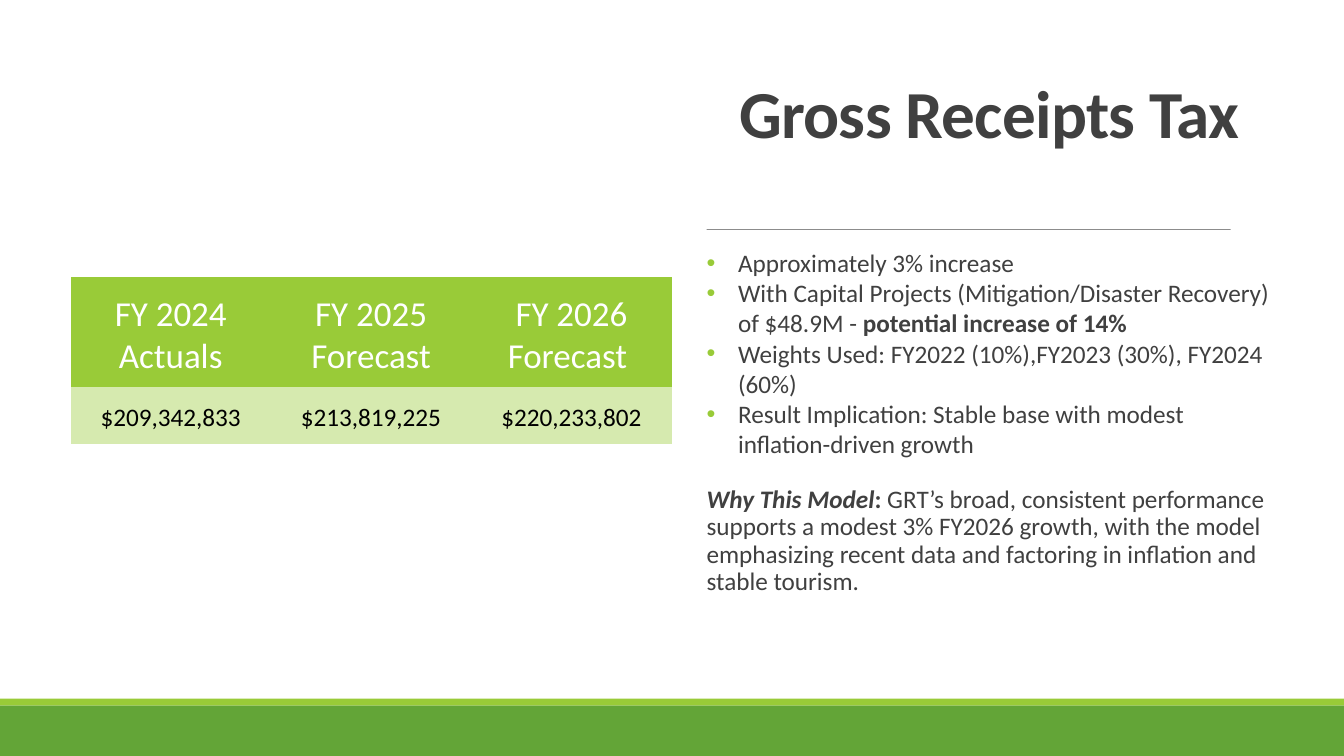
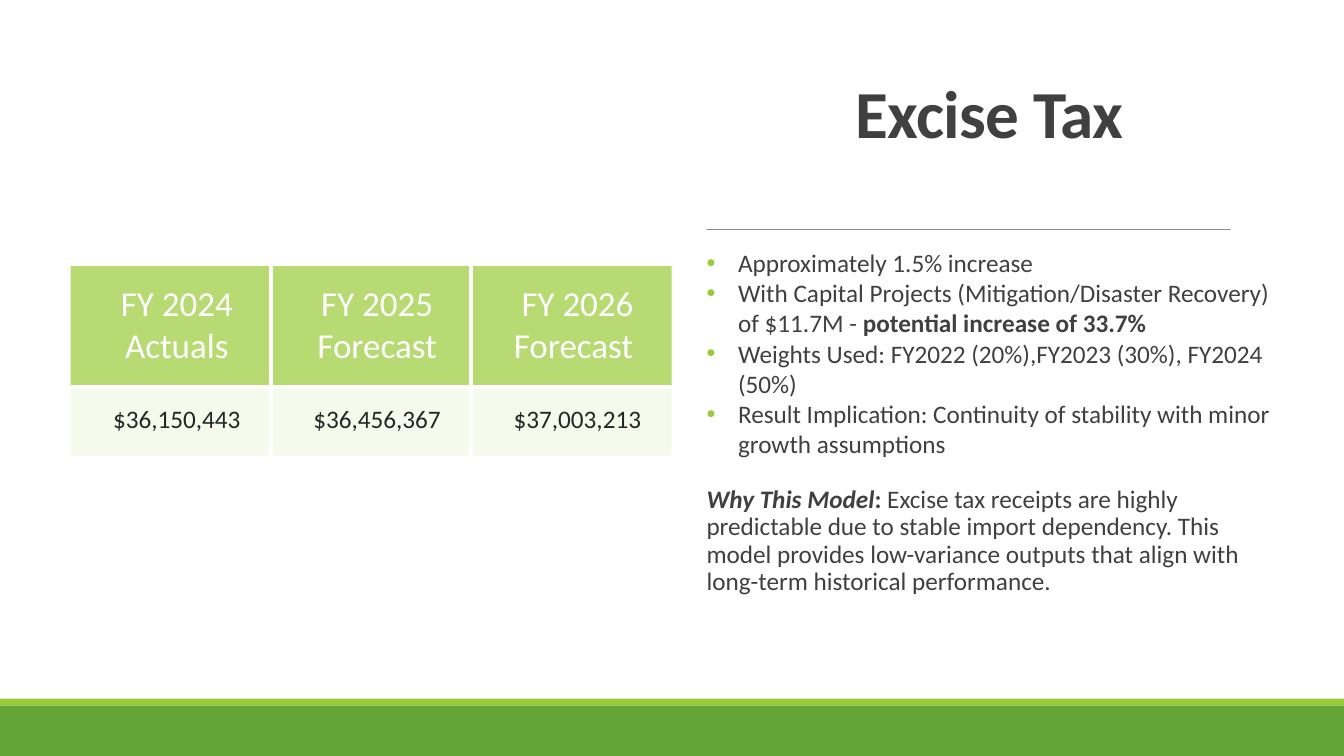
from dataclasses import dataclass

from lxml import etree
from pptx import Presentation
from pptx.dml.color import RGBColor
from pptx.enum.shapes import MSO_CONNECTOR, MSO_SHAPE
from pptx.enum.text import MSO_ANCHOR, PP_ALIGN
from pptx.oxml.ns import qn
from pptx.util import Pt

RECT = MSO_SHAPE.RECTANGLE
STRAIGHT = MSO_CONNECTOR.STRAIGHT
TOP = MSO_ANCHOR.TOP
MIDDLE = MSO_ANCHOR.MIDDLE
BOTTOM = MSO_ANCHOR.BOTTOM
LEFT = PP_ALIGN.LEFT
CENTER = PP_ALIGN.CENTER
PLAIN_GRID = "{2D5ABB26-0587-4C30-8999-92F81FD0307C}"


@dataclass(frozen=True)
class Theme:
    font: str = "Calibri"
    white: str = "FFFFFF"
    black: str = "000000"
    ink: str = "404040"
    dark: str = "262626"
    rule: str = "808080"
    lime: str = "99CB38"
    green: str = "63A537"
    pale: str = "D6EAAF"
    mint: str = "C2E088"
    title: float = 48
    head: float = 25
    body: float = 18


@dataclass(frozen=True)
class Grid:
    top: float
    rows: tuple
    inset: tuple
    fills: tuple
    color: str
    anchor: object
    border: float = 0


THEME = Theme()
WIDTH, HEIGHT = 960, 540
BAND_TOP, FOOT_TOP = 499, 504
TEXT_LEFT, TEXT_WIDTH = 504.7, 404
RULE_TOP, RULE_END = 164, 879
GRID_LEFT, COLUMN = 50.4, 143.1
INDENT = 22.5
HEADS = ("FY 2024 Actuals", "FY 2025 Forecast", "FY 2026 Forecast ")

SOLID = Grid(198, (78.5, 41), (10.8, 10.8, 10.8, 5.8),
             ((THEME.lime, 100), (THEME.pale, 100)), THEME.black, MIDDLE)
LINED = Grid(190, (86.4, 49), (20.9, 12.2, 12.2, 12.2),
             ((THEME.lime, 70), (THEME.mint, 15)), THEME.dark, TOP, 3)


def paint(fill, color, alpha=100):
    fill.solid()
    fill.fore_color.rgb = RGBColor.from_string(color)
    if alpha < 100:
        for node in fill._xPr.iter(qn("a:srgbClr")):
            if node.getparent().getparent() is fill._xPr:
                etree.SubElement(node, qn("a:alpha"), val=str(alpha * 1000))


def write(para, text, size=THEME.body, color=THEME.ink, bold=False,
          slant=False, track=0):
    run = para.add_run()
    run.text = text
    font = run.font
    font.name, font.size = THEME.font, Pt(size)
    font.bold, font.italic = bold, slant
    font.color.rgb = RGBColor.from_string(color)
    if track:
        run._r.get_or_add_rPr().set("spc", str(int(track * 100)))


def space(para, align=LEFT, line=1.0, before=0, after=0):
    para.alignment = align
    para.line_spacing = line
    para.space_before, para.space_after = Pt(before), Pt(after)


def bullet(para):
    props = para._p.get_or_add_pPr()
    props.set("marL", str(Pt(INDENT)))
    props.set("indent", str(-Pt(INDENT)))
    tint = etree.SubElement(props, qn("a:buClr"))
    etree.SubElement(tint, qn("a:srgbClr"), val=THEME.lime)
    etree.SubElement(props, qn("a:buFont"), typeface="Arial")
    etree.SubElement(props, qn("a:buChar"), char="•")


def panel(slide, top, height, color):
    shape = slide.shapes.add_shape(RECT, 0, Pt(top), Pt(WIDTH), Pt(height))
    shape.shadow.inherit = False
    paint(shape.fill, color)
    shape.line.fill.background()


def textbox(slide, top, height, inset, anchor=TOP):
    box = slide.shapes.add_textbox(Pt(TEXT_LEFT), Pt(top), Pt(TEXT_WIDTH), Pt(height))
    frame = box.text_frame
    frame.word_wrap = True
    frame.vertical_anchor = anchor
    (frame.margin_left, frame.margin_top,
     frame.margin_right, frame.margin_bottom) = map(Pt, inset)
    return frame


def divide(slide):
    line = slide.shapes.add_connector(STRAIGHT, Pt(TEXT_LEFT), Pt(RULE_TOP),
                                      Pt(RULE_END), Pt(RULE_TOP))
    line.line.width = Pt(0.5)
    paint(line.line.fill, THEME.rule, 90)
    etree.SubElement(line._element.spPr, qn("a:effectLst"))


def head(slide, text):
    frame = textbox(slide, 49.7, RULE_TOP - 49.7, (7.2, 3.6, 7.2, 55), BOTTOM)
    para = frame.paragraphs[0]
    space(para, CENTER, 0.85)
    write(para, text, size=THEME.title, bold=True, track=-0.5)


def body(slide, points, reason):
    frame = textbox(slide, 173, 289, (0, 3.6, 0, 3.6))
    para = frame.paragraphs[0]
    for plain, strong in points:
        space(para)
        bullet(para)
        write(para, plain)
        if strong:
            write(para, strong, bold=True)
        para = frame.add_paragraph()
    space(para, line=0.9, before=20, after=8)
    write(para, "Why This Model", bold=True, slant=True)
    write(para, ": ", bold=True)
    write(para, reason)


def edge(cell, sides, width):
    props = cell._tc.get_or_add_tcPr()
    for side in sides:
        line = etree.SubElement(props, qn("a:ln" + side), w=str(Pt(width)))
        fill = etree.SubElement(line, qn("a:solidFill"))
        etree.SubElement(fill, qn("a:srgbClr"), val=THEME.white)


def inner(row, col):
    ends = (("L", col > 0), ("R", col < len(HEADS) - 1),
            ("T", row > 0), ("B", row == 0))
    return [side for side, shown in ends if shown]


def table(slide, grid, values):
    data = (HEADS, values)
    frame = slide.shapes.add_table(len(data), len(HEADS), Pt(GRID_LEFT), Pt(grid.top),
                                   Pt(COLUMN * len(HEADS)), Pt(sum(grid.rows)))
    chart = frame.table
    chart.first_row = chart.horz_banding = False
    chart._tbl.tblPr.find(qn("a:tableStyleId")).text = PLAIN_GRID
    for column in chart.columns:
        column.width = Pt(COLUMN)
    looks = ((THEME.head, THEME.white, grid.anchor), (THEME.body, grid.color, TOP))
    for row, (texts, look) in enumerate(zip(data, looks)):
        size, color, anchor = look
        chart.rows[row].height = Pt(grid.rows[row])
        for col, text in enumerate(texts):
            cell = chart.cell(row, col)
            (cell.margin_left, cell.margin_top,
             cell.margin_right, cell.margin_bottom) = map(Pt, grid.inset)
            cell.vertical_anchor = anchor
            if grid.border:
                edge(cell, inner(row, col), grid.border)
            paint(cell.fill, *grid.fills[row])
            para = cell.text_frame.paragraphs[0]
            space(para, CENTER)
            write(para, text, size=size, color=color)


def build(deck, title, points, reason, grid, values):
    slide = deck.slides.add_slide(deck.slide_layouts[6])
    panel(slide, 0, BAND_TOP, THEME.white)
    head(slide, title)
    divide(slide)
    body(slide, points, reason)
    panel(slide, BAND_TOP, FOOT_TOP - BAND_TOP, THEME.lime)
    panel(slide, FOOT_TOP, HEIGHT - FOOT_TOP, THEME.green)
    table(slide, grid, values)


def main():
    deck = Presentation()
    deck.slide_width, deck.slide_height = Pt(WIDTH), Pt(HEIGHT)
    build(
        deck, "Gross Receipts Tax",
        (("Approximately 3% increase", ""),
         ("With Capital Projects (Mitigation/Disaster Recovery) of $48.9M - ",
          "potential increase of 14%"),
         ("Weights Used: FY2022 (10%),FY2023 (30%), FY2024 (60%)", ""),
         ("Result Implication: Stable base with modest inflation-driven growth", "")),
        "GRT’s broad, consistent performance supports a modest 3% FY2026 growth, "
        "with the model emphasizing recent data and factoring in inflation and "
        "stable tourism.",
        SOLID, ("$209,342,833", "$213,819,225", "$220,233,802"))
    build(
        deck, "Excise Tax",
        (("Approximately 1.5% increase", ""),
         ("With Capital Projects (Mitigation/Disaster Recovery) of $11.7M - ",
          "potential increase of 33.7%"),
         ("Weights Used: FY2022 (20%),FY2023 (30%), FY2024 (50%)", ""),
         ("Result Implication: Continuity of stability with minor growth assumptions",
          "")),
        "Excise tax receipts are highly predictable due to stable import dependency. "
        "This model provides low-variance outputs that align with long-term "
        "historical performance.",
        LINED, ("$36,150,443", "$36,456,367", "$37,003,213"))
    deck.save("out.pptx")


if __name__ == "__main__":
    main()
